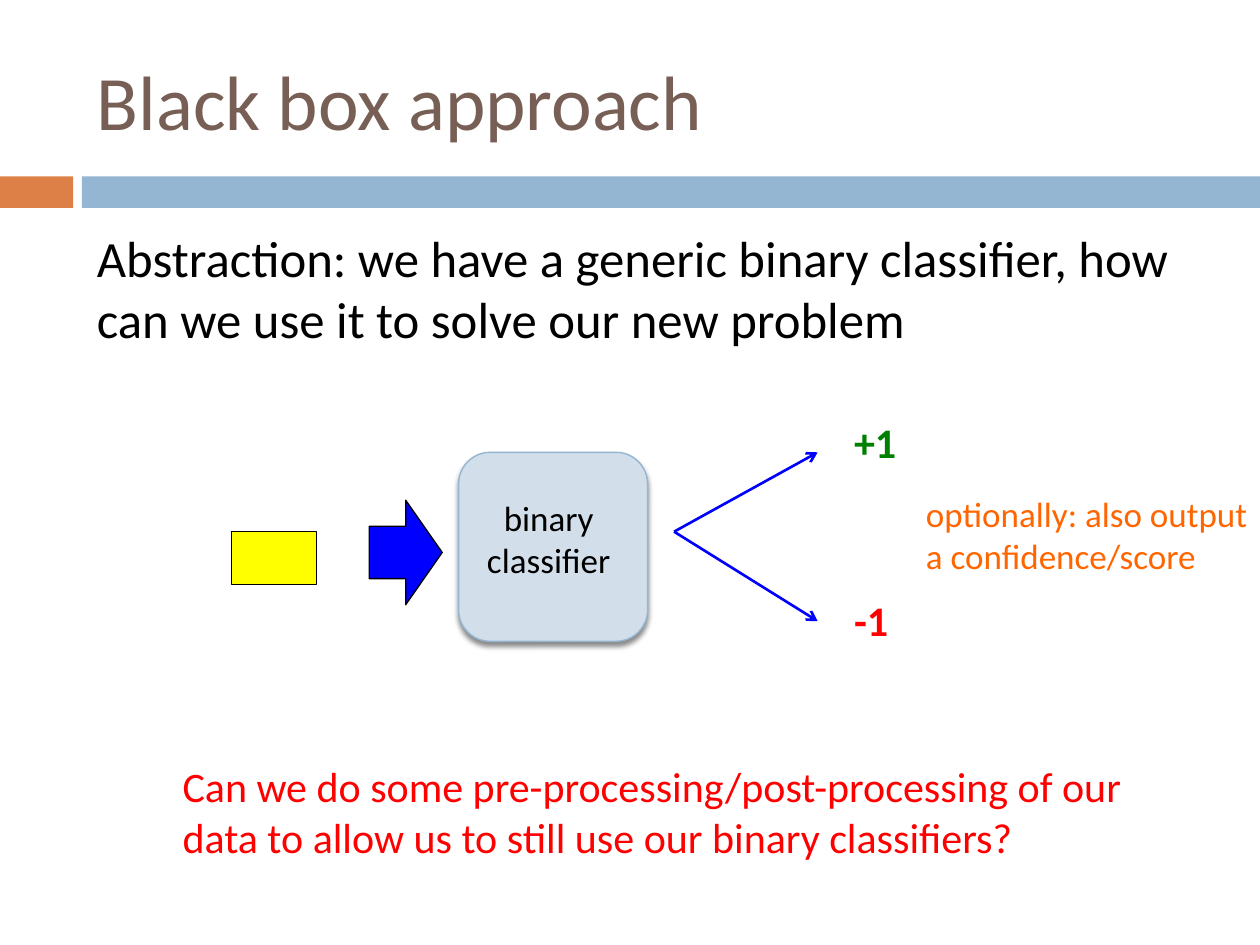
from lxml.etree import SubElement
from pptx import Presentation
from pptx.dml.color import RGBColor
from pptx.enum.shapes import MSO_CONNECTOR as Connector, MSO_SHAPE as Shape
from pptx.enum.text import MSO_ANCHOR as Anchor, MSO_AUTO_SIZE as AutoSize, PP_ALIGN as Align
from pptx.oxml.ns import qn
from pptx.util import Inches, Pt

BLACK = RGBColor(0x00, 0x00, 0x00)
BROWN = RGBColor(0x77, 0x5F, 0x55)
RUST = RGBColor(0xDD, 0x80, 0x47)
SKY = RGBColor(0x94, 0xB6, 0xD2)
PALE = RGBColor(0xD2, 0xDE, 0xEA)
YELLOW = RGBColor(0xFF, 0xFF, 0x00)
BLUE = RGBColor(0x00, 0x00, 0xFF)
GREEN = RGBColor(0x00, 0x80, 0x00)
RED = RGBColor(0xFF, 0x00, 0x00)
ORANGE = RGBColor(0xFF, 0x66, 0x00)


class SlideBuilder:
    font = "Calibri"

    def __init__(self, page):
        self.page = page

    def shape(self, kind, left, top, width, height, fill, line=None, weight=0.75):
        item = self.page.shapes.add_shape(
            kind, Inches(left), Inches(top), Inches(width), Inches(height))
        item.shadow.inherit = False
        item.fill.solid()
        item.fill.fore_color.rgb = fill
        if line is None:
            item.line.fill.background()
        else:
            item.line.color.rgb = line
            item.line.width = Pt(weight)
        return item

    def drop_shadow(self, item):
        effects = item.element.spPr.find(qn("a:effectLst"))
        shadow = SubElement(effects, qn("a:outerShdw"), blurRad=str(Pt(3)),
                            dist=str(Pt(2.4)), dir="5400000", rotWithShape="0")
        color = SubElement(shadow, qn("a:srgbClr"), val="000000")
        SubElement(color, qn("a:alpha"), val="45000")

    def text(self, words, left, top, width, height, size, color, bold=False,
             align=Align.LEFT, anchor=Anchor.TOP, wrap=True, grow=True, before=0):
        box = self.page.shapes.add_textbox(
            Inches(left), Inches(top), Inches(width), Inches(height))
        frame = box.text_frame
        frame.word_wrap = wrap
        frame.auto_size = AutoSize.SHAPE_TO_FIT_TEXT if grow else AutoSize.NONE
        frame.vertical_anchor = anchor
        para = frame.paragraphs[0]
        para.alignment = align
        para.space_before = Pt(before)
        span = para.add_run()
        span.text = words
        span.font.name = self.font
        span.font.size = Pt(size)
        span.font.bold = bold
        span.font.color.rgb = color

    def arrow(self, start, end, color, weight=1.5):
        ends = [Inches(value) for value in (*start, *end)]
        line = self.page.shapes.add_connector(Connector.STRAIGHT, *ends)
        line.line.color.rgb = color
        line.line.width = Pt(weight)
        SubElement(line.line._get_or_add_ln(), qn("a:tailEnd"), type="arrow")
        SubElement(line.element.spPr, qn("a:effectLst"))


def main():
    deck = Presentation()
    deck.slide_width, deck.slide_height = Inches(10), Inches(7.5)
    slide = SlideBuilder(deck.slides.add_slide(deck.slide_layouts[6]))

    # Header band and title
    slide.shape(Shape.RECTANGLE, 0, 1.4, 0.58, 0.25, RUST)
    slide.shape(Shape.RECTANGLE, 0.65, 1.4, 9.35, 0.25, SKY)
    slide.text("Black box approach", 0.67, 0.25, 8.92, 1.08, 44, BROWN,
               anchor=Anchor.MIDDLE, grow=False)
    slide.text("Abstraction: we have a generic binary classifier, how can we use it "
               "to solve our new problem", 0.67, 1.75, 8.92, 1.23, 29, BLACK,
               grow=False, before=7)

    # Input example flowing into the classifier
    slide.shape(Shape.RECTANGLE, 1.84, 4.22, 0.67, 0.42, YELLOW, BLACK)
    slide.shape(Shape.RIGHT_ARROW, 2.93, 3.97, 0.58, 0.83, BLUE, BLACK)
    classifier = slide.shape(Shape.ROUNDED_RECTANGLE, 3.64, 3.59, 1.5, 1.5,
                             PALE, SKY, 0.79)
    slide.drop_shadow(classifier)
    slide.text("binary classifier", 3.57, 3.89, 1.57, 0.77, 20, BLACK,
               align=Align.CENTER)

    # Two possible outputs
    outputs = (("+1", GREEN, 3.59, 3.26, 0.61), ("-1", RED, 4.93, 4.67, 0.49))
    for label, color, tip, top, width in outputs:
        slide.arrow((5.35, 4.22), (6.49, tip), BLUE)
        slide.text(label, 6.68, top, width, 0.5, 24, color, bold=True, wrap=False)
    slide.text("optionally: also output a confidence/score",
               7.25, 3.86, 2.85, 0.77, 20, ORANGE)

    # Closing question
    slide.text("Can we do some pre-processing/post-processing of our data to allow us "
               "to still use our binary classifiers?", 1.35, 5.99, 7.99, 0.91, 24, RED)

    deck.save("out.pptx")


if __name__ == "__main__":
    main()
